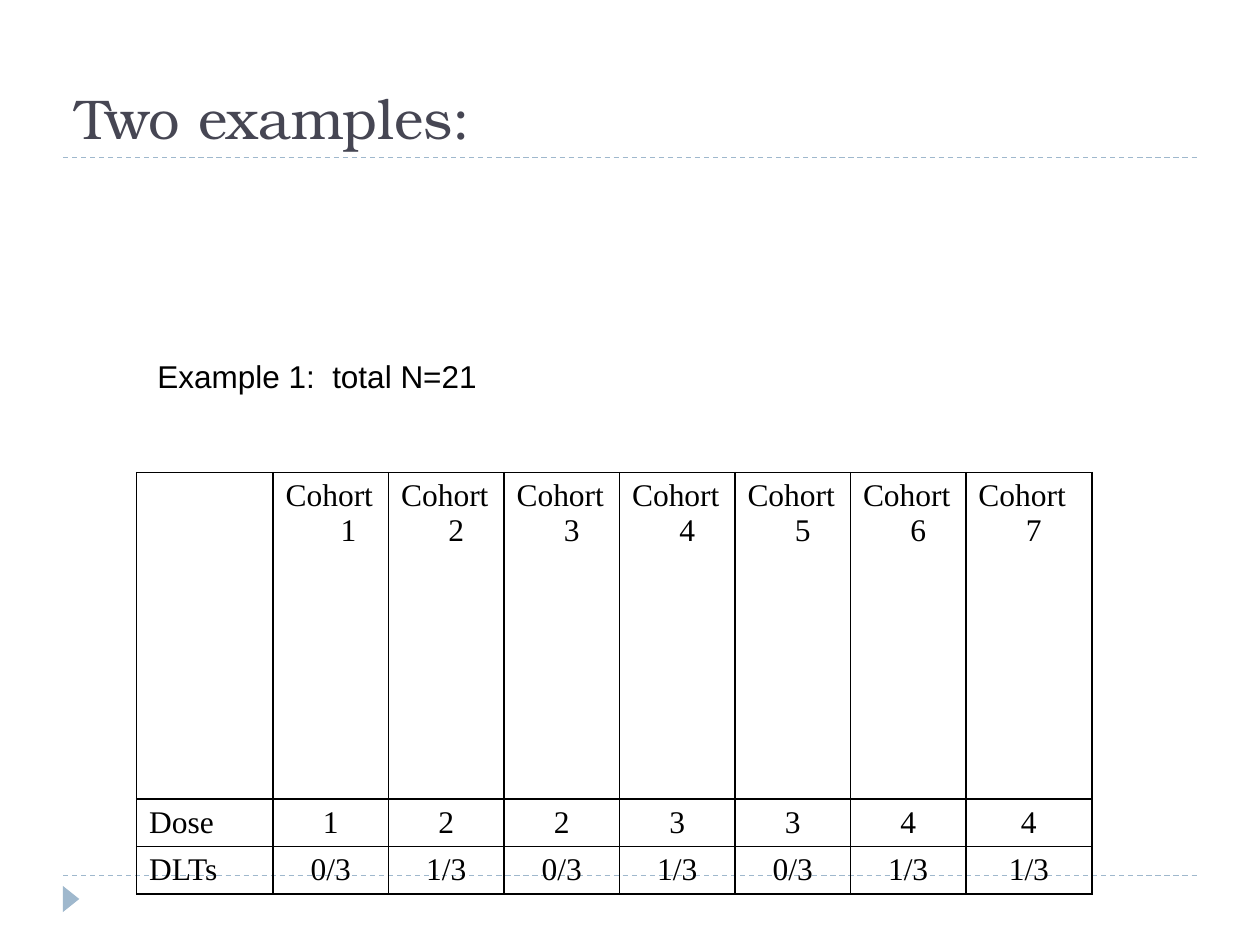
from dataclasses import dataclass

from lxml.etree import SubElement
from pptx import Presentation
from pptx.dml.color import RGBColor
from pptx.enum.dml import MSO_LINE
from pptx.enum.shapes import MSO_CONNECTOR, MSO_SHAPE
from pptx.enum.text import MSO_ANCHOR, MSO_AUTO_SIZE, PP_ALIGN
from pptx.oxml.ns import qn
from pptx.util import Pt


@dataclass(frozen=True)
class Theme:
    title_font: str = "TeX Gyre Bonum"
    label_font: str = "Arial"
    table_font: str = "Times New Roman"
    title_size: float = 32
    text_size: float = 18
    title_color: str = "464653"
    accent: str = "9FB8CD"
    ink: str = "000000"


class SlideBuilder:
    """Draws styled elements on one slide; all lengths are in points."""

    def __init__(self, slide, theme):
        self.slide = slide
        self.theme = theme

    def format_paragraph(self, paragraph, font, size, color):
        paragraph.font.name = font
        paragraph.font.size = Pt(size)
        paragraph.font.color.rgb = RGBColor.from_string(color)

    def title(self, text, left, top, width, height):
        shape = self.slide.shapes.title
        shape.left, shape.top = Pt(left), Pt(top)
        shape.width, shape.height = Pt(width), Pt(height)
        frame = shape.text_frame
        frame.text = text
        frame.auto_size = MSO_AUTO_SIZE.NONE
        frame.vertical_anchor = MSO_ANCHOR.BOTTOM
        paragraph = frame.paragraphs[0]
        paragraph.alignment = PP_ALIGN.LEFT
        self.format_paragraph(paragraph, self.theme.title_font,
                              self.theme.title_size, self.theme.title_color)

    def dashed_rule(self, left, right, y):
        rule = self.slide.shapes.add_connector(
            MSO_CONNECTOR.STRAIGHT, Pt(left), Pt(y), Pt(right), Pt(y))
        rule.line.color.rgb = RGBColor.from_string(self.theme.accent)
        rule.line.width = Pt(0.75)
        rule.line.dash_style = MSO_LINE.DASH
        SubElement(rule._element.spPr, qn("a:effectLst"))

    def corner_marker(self, left, top, width, height):
        marker = self.slide.shapes.add_shape(
            MSO_SHAPE.ISOSCELES_TRIANGLE, Pt(left), Pt(top), Pt(width), Pt(height))
        marker.rotation = 90
        marker.shadow.inherit = False
        marker.fill.solid()
        marker.fill.fore_color.rgb = RGBColor.from_string(self.theme.accent)
        marker.line.fill.background()

    def label(self, text, left, top, width, height):
        box = self.slide.shapes.add_textbox(Pt(left), Pt(top), Pt(width), Pt(height))
        frame = box.text_frame
        frame.word_wrap = False
        frame.auto_size = MSO_AUTO_SIZE.SHAPE_TO_FIT_TEXT
        frame.text = text
        self.format_paragraph(frame.paragraphs[0], self.theme.label_font,
                              self.theme.text_size, self.theme.ink)

    def cell_borders(self, cell):
        properties = cell._tc.get_or_add_tcPr()
        for position, side in enumerate(("lnL", "lnR", "lnT", "lnB")):
            line = properties.makeelement(qn(f"a:{side}"), {"w": str(Pt(1))})
            fill = SubElement(line, qn("a:solidFill"))
            SubElement(fill, qn("a:srgbClr"), val=self.theme.ink)
            properties.insert(position, line)

    def table(self, rows, left, top, column_widths, row_heights):
        """Bordered table with hanging indents; numeric results are centred."""
        table = self.slide.shapes.add_table(
            len(rows), len(column_widths), Pt(left), Pt(top),
            Pt(sum(column_widths)), Pt(sum(row_heights))).table
        table.first_row = table.horz_banding = False
        for column, width in zip(table.columns, column_widths):
            column.width = Pt(width)
        for row, height in zip(table.rows, row_heights):
            row.height = Pt(height)
        for row_index, row in enumerate(rows):
            for column_index, text in enumerate(row):
                cell = table.cell(row_index, column_index)
                cell.text = text
                cell.fill.background()
                self.cell_borders(cell)
                paragraph = cell.text_frame.paragraphs[0]
                centred = row_index > 0 and column_index > 0
                paragraph.alignment = PP_ALIGN.CENTER if centred else PP_ALIGN.LEFT
                indent = Pt(27)
                properties = paragraph._p.get_or_add_pPr()
                properties.set("marL", str(indent))
                properties.set("indent", str(-indent))
                self.format_paragraph(paragraph, self.theme.table_font,
                                      self.theme.text_size, self.theme.ink)


def main():
    presentation = Presentation()
    presentation.slide_width, presentation.slide_height = Pt(720), Pt(540)
    slide = presentation.slides.add_slide(presentation.slide_layouts[5])
    builder = SlideBuilder(slide, Theme())

    for y in (500.4, 90):
        builder.dashed_rule(36, 684, y)
    builder.corner_marker(33.1, 509, 15, 9.4)
    builder.title("Two examples:", 36, 18, 648, 72)

    cohorts = ["Cohort  1"] + [f"Cohort {number}" for number in range(2, 8)]
    rows = [
        ["", *cohorts],
        ["Dose", "1", "2", "2", "3", "3", "4", "4"],
        ["DLTs", "0/3", "1/3", "0/3", "1/3", "0/3", "1/3", "1/3"],
    ]
    builder.table(rows, 78, 270, [78] + [66] * 6 + [72], [186.6, 27, 27])
    builder.label("Example 1:  total N=21", 82.8, 200.2, 229, 28.8)

    presentation.save("out.pptx")


if __name__ == "__main__":
    main()
